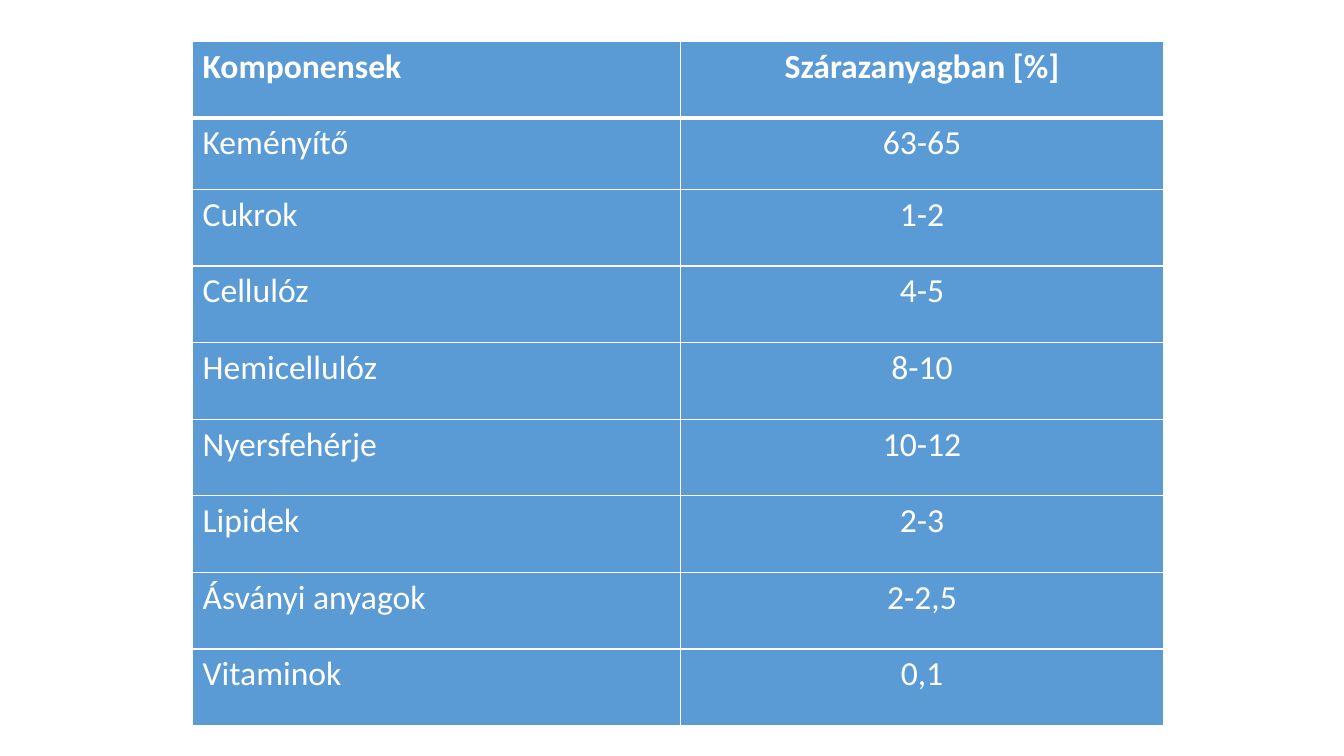
from dataclasses import dataclass

from lxml.etree import SubElement
from pptx import Presentation
from pptx.dml.color import RGBColor
from pptx.enum.text import PP_ALIGN
from pptx.oxml.ns import qn
from pptx.util import Pt

EMU_PER_PX = 9144  # 100 px to the inch


def px(length):
    return length * EMU_PER_PX


@dataclass(frozen=True)
class Theme:
    font: str = "Calibri"
    text_size: int = 24
    text_color: str = "FFFFFF"
    cell_fill: str = "5B9BD5"
    border_color: str = "FFFFFF"
    border_width: int = 1
    header_rule_width: int = 3


COMPONENTS = [
    ("Komponensek", "Szárazanyagban [%]"),
    ("Keményítő", "63-65"),
    ("Cukrok", "1-2"),
    ("Cellulóz", "4-5"),
    ("Hemicellulóz", "8-10"),
    ("Nyersfehérje", "10-12"),
    ("Lipidek", "2-3"),
    ("Ásványi anyagok", "2-2,5"),
    ("Vitaminok", "0,1"),
]
COLUMN_WIDTHS = [484, 479]
ROW_HEIGHTS = [76, 71] + [76] * (len(COMPONENTS) - 2)
COLUMN_ALIGNMENTS = [PP_ALIGN.LEFT, PP_ALIGN.CENTER]


class SlideBuilder:
    def __init__(self, slide, theme):
        self.slide = slide
        self.theme = theme

    def add_text(self, text_frame, text, bold=False, align=PP_ALIGN.LEFT):
        paragraph = text_frame.paragraphs[0]
        paragraph.alignment = align
        run = paragraph.add_run()
        run.text = text
        run.font.name = self.theme.font
        run.font.size = Pt(self.theme.text_size)
        run.font.bold = bold
        run.font.color.rgb = RGBColor.from_string(self.theme.text_color)

    def add_borders(self, cell, top, bottom):
        """Draw all four cell edges; top and bottom are widths in points."""
        properties = cell._tc.get_or_add_tcPr()
        side = self.theme.border_width
        for tag, width in (("lnL", side), ("lnR", side), ("lnT", top), ("lnB", bottom)):
            line = SubElement(properties, qn(f"a:{tag}"), w=str(Pt(width)))
            fill = SubElement(line, qn("a:solidFill"))
            SubElement(fill, qn("a:srgbClr"), val=self.theme.border_color)

    def add_table(self, left, top, rows, widths, heights, alignments):
        frame = self.slide.shapes.add_table(
            len(rows), len(widths), px(left), px(top), px(sum(widths)), px(sum(heights))
        )
        table = frame.table
        table.horz_banding = False
        for column, width in zip(table.columns, widths):
            column.width = px(width)
        for row, height in zip(table.rows, heights):
            row.height = px(height)

        thin, thick = self.theme.border_width, self.theme.header_rule_width
        for row_index, texts in enumerate(rows):
            is_header = row_index == 0
            for column_index, text in enumerate(texts):
                cell = table.cell(row_index, column_index)
                self.add_borders(
                    cell,
                    top=thick if row_index == 1 else thin,
                    bottom=thick if is_header else thin,
                )
                cell.fill.solid()
                cell.fill.fore_color.rgb = RGBColor.from_string(self.theme.cell_fill)
                self.add_text(
                    cell.text_frame, text, bold=is_header, align=alignments[column_index]
                )


def main():
    presentation = Presentation()
    presentation.slide_width = px(1333)
    presentation.slide_height = px(750)
    slide = presentation.slides.add_slide(presentation.slide_layouts[6])
    builder = SlideBuilder(slide, Theme())
    builder.add_table(
        191, 41, COMPONENTS, COLUMN_WIDTHS, ROW_HEIGHTS, COLUMN_ALIGNMENTS
    )
    presentation.save("out.pptx")


if __name__ == "__main__":
    main()
